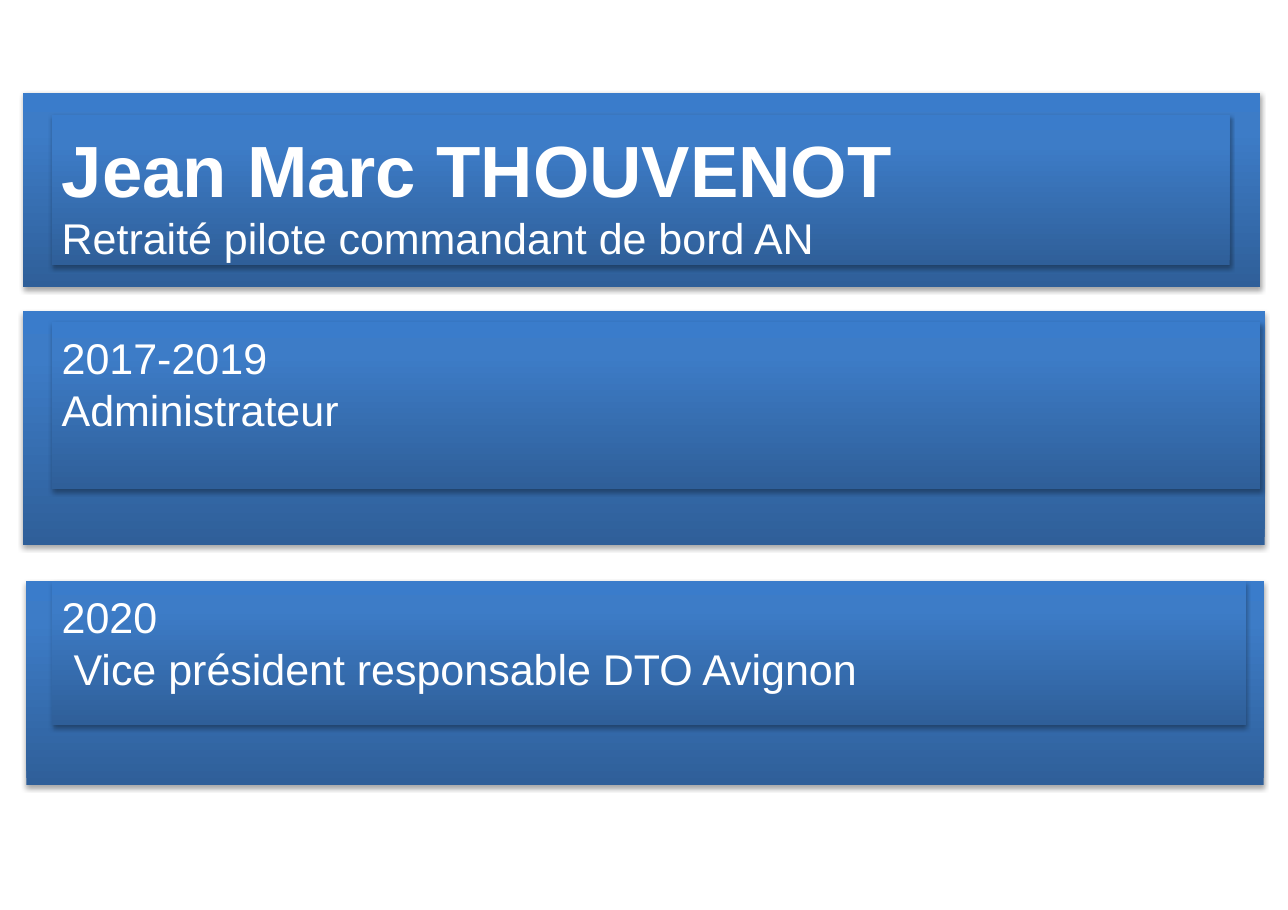
from copy import deepcopy

from lxml.etree import SubElement
from pptx import Presentation
from pptx.dml.color import RGBColor
from pptx.enum.shapes import MSO_SHAPE as Shape
from pptx.enum.text import MSO_ANCHOR as Anchor, MSO_AUTO_SIZE as AutoSize, PP_ALIGN as Align
from pptx.oxml.ns import qn
from pptx.util import Inches, Pt

GRADIENT = [(0, "2F5F99"), (0.8, "3D7CC7"), (1, "3A7CCB")]
BODY = {"name": "Arial", "size": Pt(28.1), "bold": False}
NAME = {"name": "Arial", "size": Pt(47.4), "bold": True}

BARS = [
    (0.21, 0.84, 11.23, 1.77),
    (0.21, 2.82, 11.27, 2.13),
    (0.24, 5.27, 11.23, 1.86),
]
TITLE_BOX = (0.47, 1.04, 10.69, 1.37)
TITLE_LINES = [("Jean Marc THOUVENOT", NAME), ("Retraité pilote commandant de bord AN", BODY)]
PERIODS = [
    ((0.47, 2.92, 10.97, 1.52), ["2017-2019", "Administrateur"]),
    ((0.47, 5.27, 10.84, 1.31), ["2020", " Vice président responsable DTO Avignon"]),
]


def color(hex_value):
    return RGBColor.from_string(hex_value)


def set_attributes(target, values):
    for name, value in values.items():
        setattr(target, name, value)


def fill_gradient(shape):
    """Fill from dark at the bottom to light at the top."""
    shape.fill.gradient()
    shape.fill.gradient_angle = 90
    stops = shape._element.spPr.find(qn("a:gradFill")).find(qn("a:gsLst"))
    stops.append(deepcopy(stops[-1]))
    for stop, (position, hex_value) in zip(shape.fill.gradient_stops, GRADIENT):
        stop.position = position
        stop.color.rgb = color(hex_value)


def add_shadow(shape):
    shape.shadow.inherit = False
    effects = shape._element.spPr.find(qn("a:effectLst"))
    shadow = SubElement(effects, qn("a:outerShdw"), blurRad=str(Pt(3.1)),
                        dist=str(Pt(1.8)), dir="5400000", rotWithShape="0")
    black = SubElement(shadow, qn("a:srgbClr"), val="000000")
    SubElement(black, qn("a:alpha"), val="35000")


def style_panel(shape):
    fill_gradient(shape)
    shape.line.fill.background()
    add_shadow(shape)


def add_panel(slide, box):
    shape = slide.shapes.add_shape(Shape.RECTANGLE, *map(Inches, box))
    style_panel(shape)
    return shape


def write_lines(shape, lines):
    frame = shape.text_frame
    inset = Inches(0.09)
    set_attributes(frame, {
        "word_wrap": True, "auto_size": AutoSize.NONE, "vertical_anchor": Anchor.TOP,
        "margin_left": inset, "margin_right": inset,
        "margin_top": inset, "margin_bottom": Inches(0.05),
    })
    for index, (text, font) in enumerate(lines):
        paragraph = frame.add_paragraph() if index else frame.paragraphs[0]
        paragraph.alignment = Align.LEFT
        run = paragraph.add_run()
        run.text = text
        set_attributes(run.font, font)
        run.font.color.rgb = color("FFFFFF")


def place_title(slide):
    """Turn the title placeholder into a panel in front of the bars."""
    title = slide.shapes.title
    slide.shapes._spTree.append(title._element)
    set_attributes(title, dict(zip(("left", "top", "width", "height"), map(Inches, TITLE_BOX))))
    style_panel(title)
    write_lines(title, TITLE_LINES)


def main():
    presentation = Presentation()
    presentation.slide_width = Inches(11.69)
    presentation.slide_height = Inches(8.26)
    slide = presentation.slides.add_slide(presentation.slide_layouts[5])
    for box in BARS:
        add_panel(slide, box)
    place_title(slide)
    for box, texts in PERIODS:
        write_lines(add_panel(slide, box), [(text, BODY) for text in texts])
    presentation.save("out.pptx")


if __name__ == "__main__":
    main()
